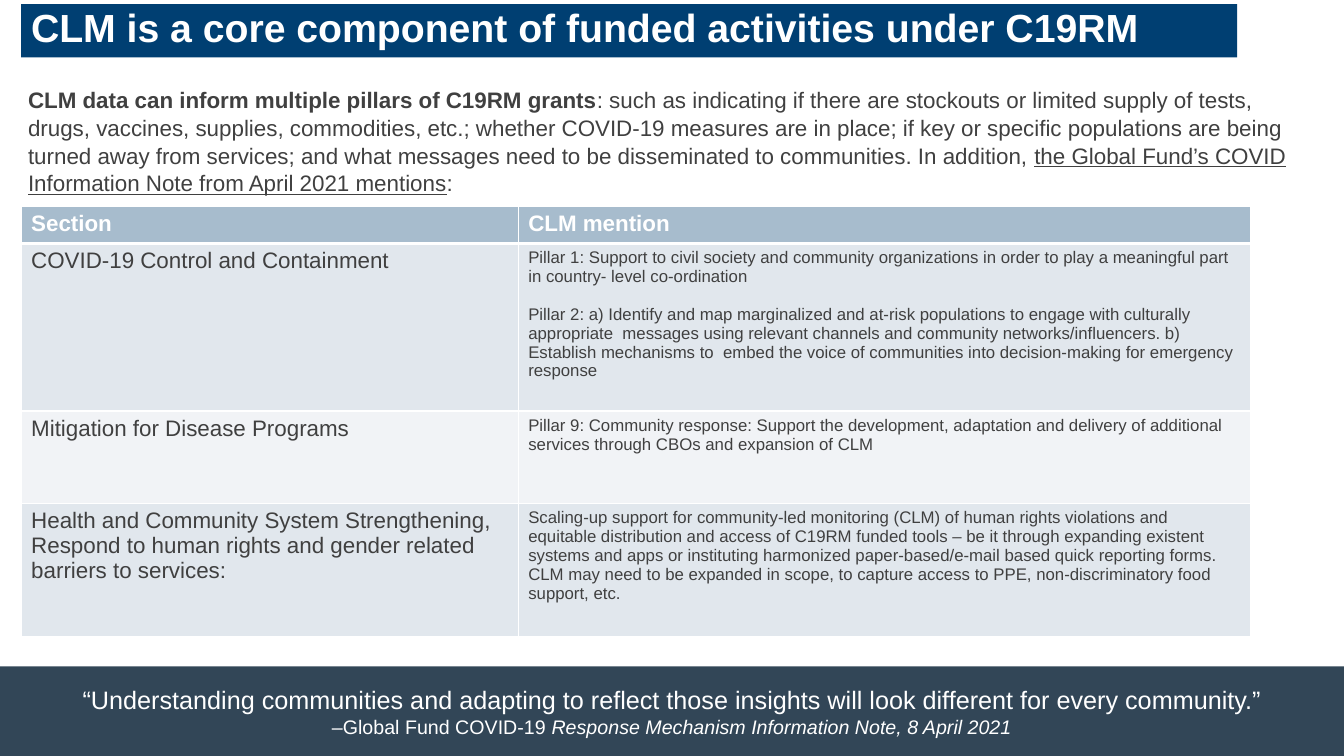
from lxml import etree
from pptx import Presentation
from pptx.dml.color import RGBColor
from pptx.enum import shapes, text
from pptx.oxml import ns
from pptx.util import Inches, Pt

NAVY = RGBColor(0x00, 0x3F, 0x72)
SLATE = RGBColor(0x32, 0x46, 0x57)
HEADER_BLUE = RGBColor(0xA7, 0xBC, 0xCD)
BAND_DARK = RGBColor(0xE1, 0xE7, 0xED)
BAND_LIGHT = RGBColor(0xF1, 0xF3, 0xF6)
GREY = RGBColor(0x40, 0x40, 0x40)
WHITE = RGBColor(0xFF, 0xFF, 0xFF)

TITLE = "CLM is a core component of funded activities under C19RM"
INTRO = [
    ("CLM data can inform multiple pillars of C19RM grants", {"bold": True}),
    (": such as indicating if there are stockouts or limited supply of tests, drugs, "
     "vaccines, supplies, commodities, etc.; whether COVID-19 measures are in place; if key "
     "or specific populations are being turned away from services; and what messages need "
     "to be disseminated to communities. In addition, ", {}),
    ("the Global Fund’s COVID Information Note from April 2021 mentions", {"underline": True}),
    (":", {}),
]
HEADINGS = ["Section", "CLM mention"]
MENTIONS = [
    ("COVID-19 Control and Containment", [
        "Pillar 1: Support to civil society and community organizations in order to play a "
        "meaningful part in country- level co-ordination",
        "Pillar 2: a) Identify and map marginalized and at-risk populations to engage with "
        "culturally appropriate  messages using relevant channels and community "
        "networks/influencers. b) Establish mechanisms to  embed the voice of communities "
        "into decision-making for emergency response"]),
    ("Mitigation for Disease Programs", [
        "Pillar 9: Community response: Support the development, adaptation and delivery of "
        "additional services through CBOs and expansion of CLM"]),
    ("Health and Community System Strengthening, Respond to human rights and gender "
     "related barriers to services:", [
         "Scaling-up support for community-led monitoring (CLM) of human rights violations "
         "and equitable distribution and access of C19RM funded tools – be it through "
         "expanding existent systems and apps or instituting harmonized paper-based/e-mail "
         "based quick reporting forms. CLM may need to be expanded in scope, to capture "
         "access to PPE, non-discriminatory food support, etc."]),
]
QUOTE = ("“Understanding communities and adapting to reflect those insights will look "
         "different for every community.”")
SOURCE = [("–Global Fund COVID-19 ", {}),
          ("Response Mechanism Information Note, 8 April 2021", {"italic": True})]


class SlideBuilder:
    font_name = "Arial"

    def __init__(self, slide):
        self.slide = slide

    def add_words(self, paragraph, pieces, size, color):
        """Fill a paragraph with (words, font settings) pieces."""
        for words, settings in pieces:
            run = paragraph.add_run()
            run.text = words
            font = run.font
            font.name, font.size, font.color.rgb = self.font_name, Pt(size), color
            font.bold = settings.get("bold")
            font.italic = settings.get("italic")
            font.underline = settings.get("underline")

    def band(self, left, top, width, height, color):
        """Add a filled rectangle and return its text frame."""
        bar = self.slide.shapes.add_shape(
            shapes.MSO_SHAPE.RECTANGLE, Inches(left), Inches(top),
            Inches(width), Inches(height))
        bar.shadow.inherit = False
        bar.fill.solid()
        bar.fill.fore_color.rgb = color
        bar.line.fill.background()
        bar.text_frame.word_wrap = True
        return bar.text_frame

    def text_box(self, left, top, width, height):
        frame = self.slide.shapes.add_textbox(
            Inches(left), Inches(top), Inches(width), Inches(height)).text_frame
        frame.word_wrap = True
        return frame

    def table(self, left, top, widths, heights):
        grid = self.slide.shapes.add_table(
            len(heights), len(widths), Inches(left), Inches(top),
            Inches(sum(widths)), Inches(sum(heights))).table
        for column, width in zip(grid.columns, widths):
            column.width = Inches(width)
        for row, height in zip(grid.rows, heights):
            row.height = Inches(height)
        return grid

    def cell(self, cell, paragraphs, size, color, fill, bold=False, top=1, bottom=1):
        """Fill a cell with white borders; top and bottom are line widths in points."""
        properties = cell._tc.get_or_add_tcPr()
        for side, width in (("L", 1), ("R", 1), ("T", top), ("B", bottom)):
            border = etree.SubElement(properties, ns.qn(f"a:ln{side}"), w=str(Pt(width)))
            paint = etree.SubElement(border, ns.qn("a:solidFill"))
            etree.SubElement(paint, ns.qn("a:srgbClr"), val=str(WHITE))
        cell.fill.solid()
        cell.fill.fore_color.rgb = fill
        frame = cell.text_frame
        for index, words in enumerate(paragraphs):
            paragraph = frame.add_paragraph() if index else frame.paragraphs[0]
            if index:
                paragraph.space_before = Pt(13.5)
            self.add_words(paragraph, [(words, {"bold": bold})], size, color)


def main():
    deck = Presentation()
    deck.slide_width, deck.slide_height = Inches(13.33), Inches(7.5)
    builder = SlideBuilder(deck.slides.add_slide(deck.slide_layouts[6]))

    title = builder.band(0.21, 0.04, 12.06, 0.53, NAVY)
    title.vertical_anchor = text.MSO_ANCHOR.TOP
    heading = title.paragraphs[0]
    heading.alignment = text.PP_ALIGN.LEFT
    heading.line_spacing = 0.9
    builder.add_words(heading, [(TITLE, {"bold": True})], 28, WHITE)

    intro = builder.text_box(0.18, 0.62, 12.94, 4.19)
    intro.margin_top = Inches(0.22)
    intro.paragraphs[0].line_spacing = 1.04
    builder.add_words(intro.paragraphs[0], INTRO, 16, GREY)

    quote = builder.band(0, 6.61, 13.33, 0.89, SLATE)
    quote.vertical_anchor = text.MSO_ANCHOR.MIDDLE
    lines = (([(QUOTE, {})], 18), (SOURCE, 14))
    for paragraph, (pieces, size) in zip((quote.paragraphs[0], quote.add_paragraph()), lines):
        paragraph.alignment = text.PP_ALIGN.CENTER
        builder.add_words(paragraph, pieces, size, WHITE)

    grid = builder.table(0.21, 2.05, [4.93, 7.26], [0.36, 1.66, 0.92, 1.32])
    for column, words in enumerate(HEADINGS):
        builder.cell(grid.cell(0, column), [words], 16, WHITE, HEADER_BLUE,
                     bold=True, bottom=3)
    for row, (section, mentions) in enumerate(MENTIONS, start=1):
        fill = BAND_DARK if row % 2 else BAND_LIGHT
        top = 3 if row == 1 else 1
        builder.cell(grid.cell(row, 0), [section], 16, GREY, fill, top=top)
        builder.cell(grid.cell(row, 1), mentions, 12, GREY, fill, top=top)

    deck.save("out.pptx")


if __name__ == "__main__":
    main()
